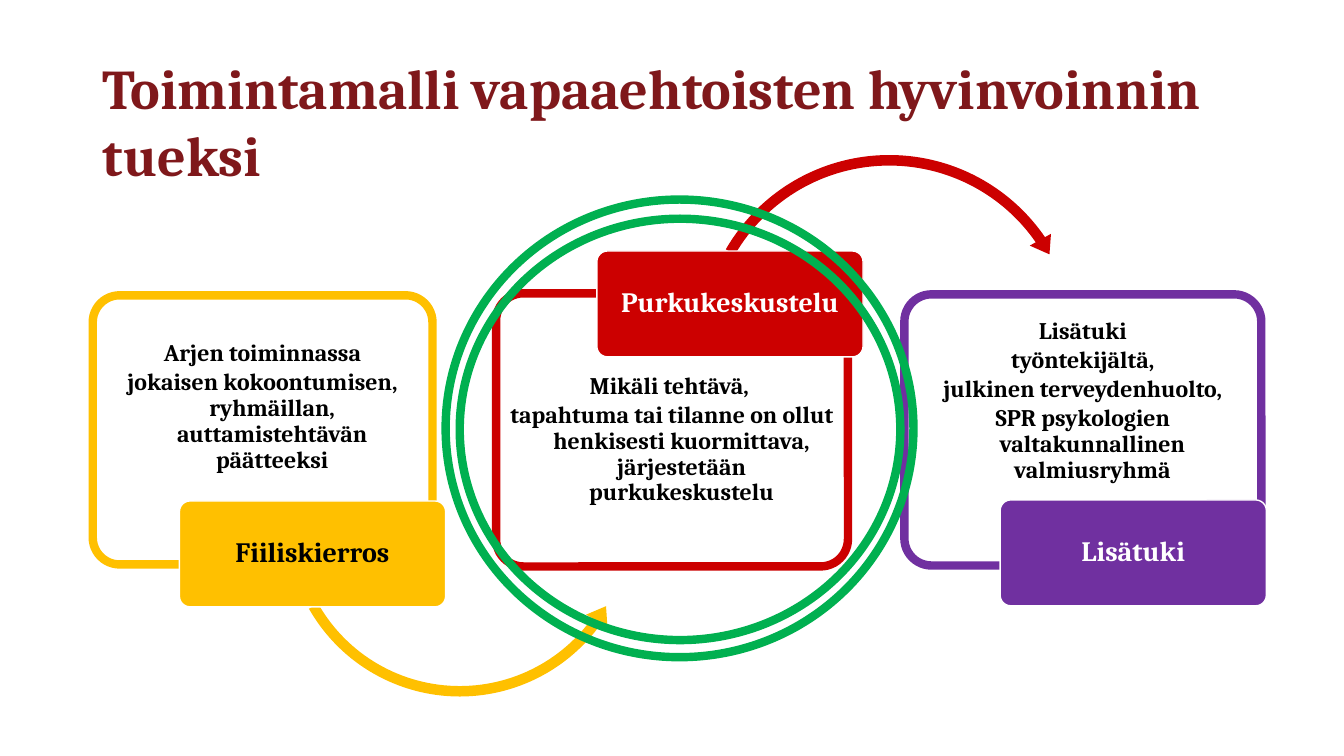
from lxml.etree import SubElement
from pptx import Presentation
from pptx.dml.color import RGBColor
from pptx.enum.shapes import MSO_SHAPE
from pptx.enum.text import MSO_ANCHOR, MSO_AUTO_SIZE, PP_ALIGN
from pptx.oxml.ns import qn
from pptx.util import Inches, Pt

FONT = "Cambria"
MAROON = RGBColor(0x7F, 0x18, 0x1B)
YELLOW = RGBColor(0xFF, 0xC0, 0x00)
RED = RGBColor(0xCC, 0x00, 0x00)
PURPLE = RGBColor(0x70, 0x30, 0xA0)
GREEN = RGBColor(0x00, 0xB0, 0x50)
WHITE = RGBColor(0xFF, 0xFF, 0xFF)
BLACK = RGBColor(0x00, 0x00, 0x00)


def add_span(para, text, size, color):
    span = para.add_run()
    span.text = text
    span.font.name = FONT
    span.font.size = Pt(size)
    span.font.bold = True
    span.font.color.rgb = color


def add_title(page, text):
    title = page.shapes.title
    title.left, title.top = Inches(0.92), Inches(0.65)
    title.width, title.height = Inches(11.5), Inches(1.09)
    frame = title.text_frame
    frame.auto_size = MSO_AUTO_SIZE.NONE
    frame.vertical_anchor = MSO_ANCHOR.MIDDLE
    para = frame.paragraphs[0]
    para.alignment = PP_ALIGN.LEFT
    add_span(para, text, 40, MAROON)


def add_figure(page, kind, place, fill=None, line=None, weight=6):
    figure = page.shapes.add_shape(kind, *map(Inches, place))
    figure.shadow.inherit = False
    if fill is None:
        figure.fill.background()
    else:
        figure.fill.solid()
        figure.fill.fore_color.rgb = fill
    if line is None:
        figure.line.fill.background()
    else:
        figure.line.color.rgb = line
        figure.line.width = Pt(weight)
    return figure


def set_frame(figure, anchor, top, bottom):
    frame = figure.text_frame
    frame.word_wrap = True
    frame.vertical_anchor = anchor
    frame.margin_left = frame.margin_right = Inches(0.02)
    frame.margin_top, frame.margin_bottom = Inches(top), Inches(bottom)
    return frame


def add_card(page, place, color, lines, anchor, top, bottom):
    card = add_figure(page, MSO_SHAPE.ROUNDED_RECTANGLE, place, WHITE, color)
    card.adjustments[0] = 0.1
    fill_color = card.fill._xPr.find(qn("a:solidFill"))[0]
    SubElement(fill_color, qn("a:alpha")).set("val", "90000")
    frame = set_frame(card, anchor, top, bottom)
    for index, text in enumerate(lines):
        para = frame.add_paragraph() if index else frame.paragraphs[0]
        para.alignment = PP_ALIGN.CENTER
        para.line_spacing = 0.9
        para.space_after = Pt(2.5)
        properties = para._p.get_or_add_pPr()
        properties.set("marL", str(Inches(0.19)))
        properties.set("indent", str(-Inches(0.19)))
        add_span(para, text, 17, BLACK)


def add_label(page, left, top, color, text, text_color):
    place = (left, top, 2.64, 1.05)
    label = add_figure(page, MSO_SHAPE.ROUNDED_RECTANGLE, place, color, WHITE, 1)
    label.adjustments[0] = 0.1
    para = set_frame(label, MSO_ANCHOR.MIDDLE, 0.03, 0.03).paragraphs[0]
    para.alignment = PP_ALIGN.CENTER
    para.line_spacing = 0.9
    add_span(para, text, 20, text_color)


def add_arrow(page, kind, left, top, size, color, adjustments):
    arrow = add_figure(page, kind, (left, top, size, size), color)
    for index, value in enumerate(adjustments):
        arrow.adjustments[index] = value


def main():
    deck = Presentation()
    deck.slide_width, deck.slide_height = Inches(13.33), Inches(7.5)
    page = deck.slides.add_slide(deck.slide_layouts[5])
    add_title(page, "Toimintamalli vapaaehtoisten hyvinvoinnin tueksi")

    add_card(page, (0.92, 2.93, 3.37, 2.67), YELLOW, [
        "Arjen toiminnassa",
        "jokaisen kokoontumisen, ryhmäillan, auttamistehtävän päätteeksi",
    ], MSO_ANCHOR.MIDDLE, 0.14, 0.59)
    add_arrow(page, MSO_SHAPE.LEFT_CIRCULAR_ARROW, 2.77, 3.4, 3.58, YELLOW,
              (0.029, 3.528, 21.284, 90.246, 0.034))
    add_label(page, 1.78, 4.97, YELLOW, "Fiiliskierros", BLACK)

    add_card(page, (4.92, 2.91, 3.49, 2.71), RED, [
        "Mikäli tehtävä, ",
        "tapahtuma tai tilanne on ollut henkisesti kuormittava, "
        "järjestetään purkukeskustelu",
    ], MSO_ANCHOR.TOP, 0.72, 0.02)
    add_arrow(page, MSO_SHAPE.CIRCULAR_ARROW, 6.88, 1.47, 3.88, RED,
              (0.027, 3.231, 195.275, 126.016, 0.031))
    add_label(page, 5.92, 2.49, RED, "Purkukeskustelu", WHITE)

    add_card(page, (8.97, 2.92, 3.54, 2.69), PURPLE, [
        "Lisätuki",
        "työntekijältä,",
        "julkinen terveydenhuolto,",
        "SPR psykologien valtakunnallinen valmiusryhmä",
    ], MSO_ANCHOR.MIDDLE, 0.02, 0.59)
    add_label(page, 9.92, 4.96, PURPLE, "Lisätuki", WHITE)

    for place in ((4.42, 1.98, 4.64, 4.54), (4.56, 2.17, 4.37, 4.18)):
        add_figure(page, MSO_SHAPE.FLOWCHART_CONNECTOR, place, line=GREEN)

    deck.save("out.pptx")


if __name__ == "__main__":
    main()
